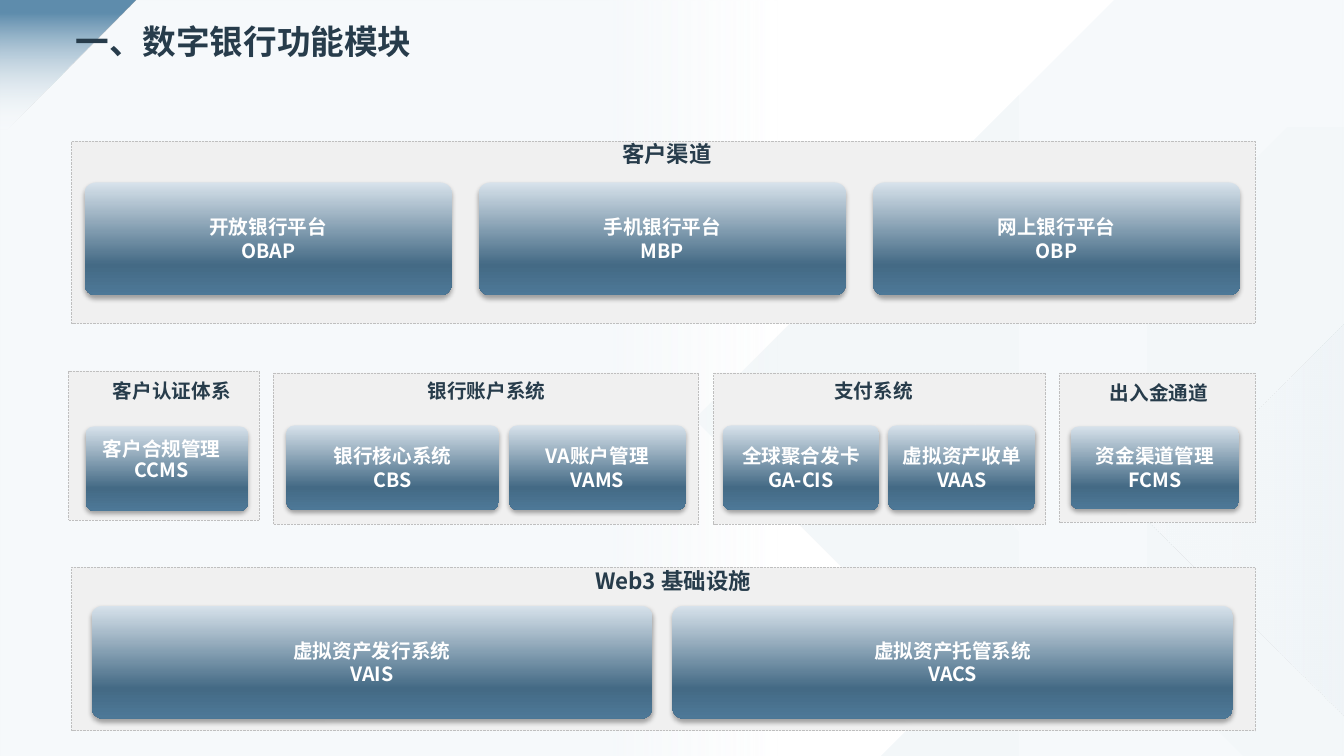
"""Build the slide on the function modules of a digital bank."""
from lxml import etree
from pptx import Presentation
from pptx.dml.color import RGBColor
from pptx.enum.dml import MSO_LINE
from pptx.enum.shapes import MSO_SHAPE
from pptx.enum.text import MSO_ANCHOR, PP_ALIGN
from pptx.oxml import parse_xml
from pptx.oxml.ns import nsdecls, qn
from pptx.util import Inches, Pt

RECTANGLE, ROUNDED = MSO_SHAPE.RECTANGLE, MSO_SHAPE.ROUNDED_RECTANGLE
TRIANGLE, DOTTED = MSO_SHAPE.RIGHT_TRIANGLE, MSO_LINE.ROUND_DOT
LEFT, CENTER = PP_ALIGN.LEFT, PP_ALIGN.CENTER
TOP, MIDDLE = MSO_ANCHOR.TOP, MSO_ANCHOR.MIDDLE

FONT = "Noto Sans CJK SC"
NAVY = RGBColor(0x27, 0x3C, 0x4B)
WHITE = RGBColor(0xFF, 0xFF, 0xFF)
PANEL_GREY = RGBColor(0xF0, 0xF0, 0xF0)
BORDER_GREY = RGBColor(0xBF, 0xBF, 0xBF)
MIST = RGBColor(0xF6, 0xF9, 0xFB)
HAZE = RGBColor(0xF3, 0xF7, 0xF9)
FOG = RGBColor(0xEF, 0xF4, 0xF8)
CORNER_BLUE = RGBColor(0x5F, 0x8D, 0xAD)
CARD_STOPS = [
    (0, RGBColor(0xD7, 0xE2, 0xEB), 100),
    (73, RGBColor(0x44, 0x6A, 0x85), 100),
    (100, RGBColor(0x4D, 0x78, 0x97), 100),
]

WIDTH, HEIGHT = 13.33, 7.5
CORNER = 1.35
TITLE = "一、数字银行功能模块"
TITLE_BOX = (0.65, 0.25, 10.53, 0.51)

FACET_STOPS = [(0, MIST, 100), (100, HAZE, 100)]
FACETS = [
    ([(11.05, 0), (WIDTH, 0), (WIDTH, HEIGHT), (8.74, HEIGHT), (9.48, 6.76), (6.89, 4.16)],
     FACET_STOPS, 180),
    ([(12.77, 1.26), (WIDTH, 1.26), (WIDTH, HEIGHT), (12.33, HEIGHT), (9.43, 4.6)],
     FACET_STOPS, 0),
    ([(WIDTH, 3.21), (WIDTH, 7.11), (11.38, 5.16)],
     [(0, MIST, 100), (57, HAZE, 100), (100, FOG, 70)], 0),
]

LARGE = {"size": 16, "spacing": 1.1, "inset": 0}
SMALL = {"size": 14, "spacing": 0.7, "inset": 0.03}
CCMS = "客户合规管理CCMS"
CCMS_BOX = (0.79, 4.36, 1.63, 0.53)

MODULES = [
    {"panel": (0.71, 1.4, 11.74, 1.81), "heading": "客户渠道",
     "place": (5.3, 1.36, 2.63, 0.29), "look": LARGE,
     "row": (0.84, 1.81, 1.12), "gap": 0.27,
     "cards": [(3.64, ["开放银行平台", "OBAP"]),
               (3.64, ["手机银行平台", "MBP"]),
               (3.64, ["网上银行平台", "OBP"])]},
    {"panel": (0.68, 3.68, 1.89, 1.48), "heading": "客户认证体系",
     "place": (0.93, 3.79, 1.55, 0.28), "look": SMALL,
     "row": (0.85, 4.23, 0.84), "gap": 0, "cards": [(1.61, [])]},
    {"panel": (2.71, 3.7, 4.22, 1.5), "heading": "银行账户系统",
     "place": (3.83, 3.79, 1.99, 0.32), "look": SMALL,
     "row": (2.84, 4.22, 0.84), "gap": 0.1,
     "cards": [(2.11, ["银行核心系统", "CBS"]), (1.75, ["VA账户管理", "VAMS"])]},
    {"panel": (7.08, 3.7, 3.29, 1.5), "heading": "支付系统",
     "place": (7.67, 3.79, 1.99, 0.32), "look": SMALL,
     "row": (7.17, 4.22, 0.84), "gap": 0.09,
     "cards": [(1.55, ["全球聚合发卡", "GA-CIS"]), (1.46, ["虚拟资产收单", "VAAS"])]},
    {"panel": (10.51, 3.7, 1.94, 1.48), "heading": "出入金通道",
     "place": (10.72, 3.81, 1.55, 0.28), "look": SMALL,
     "row": (10.62, 4.23, 0.82), "gap": 0,
     "cards": [(1.67, ["资金渠道管理", "FCMS"])]},
    {"panel": (0.71, 5.63, 11.74, 1.62), "heading": "Web3 基础设施",
     "place": (4.75, 5.6, 3.85, 0.29), "look": LARGE,
     "row": (0.91, 6.01, 1.12), "gap": 0.2,
     "cards": [(5.56, ["虚拟资产发行系统", "VAIS"]),
               (5.56, ["虚拟资产托管系统", "VACS"])]},
]


def set_all(target, values):
    for name, value in values.items():
        setattr(target, name, value)


def fill_gradient(shape, stops, angle):
    shape.fill.background()
    stop_xml = "".join(
        f'<a:gs pos="{place * 1000}"><a:srgbClr val="{color}">'
        f'<a:alpha val="{opacity * 1000}"/></a:srgbClr></a:gs>'
        for place, color, opacity in stops)
    gradient = parse_xml(
        f'<a:gradFill {nsdecls("a")} rotWithShape="1"><a:gsLst>{stop_xml}</a:gsLst>'
        f'<a:lin ang="{angle * 60000}" scaled="0"/></a:gradFill>')
    properties = shape._element.spPr
    properties.replace(properties.find(qn("a:noFill")), gradient)


def add_shape(page, kind, box):
    shape = page.shapes.add_shape(kind, *map(Inches, box))
    shape.shadow.inherit = False
    shape.line.fill.background()
    return shape


def write(shape, lines, size, color, align=CENTER, anchor=TOP, spacing=1.0, inset=0.0):
    frame = shape.text_frame
    set_all(frame, {"word_wrap": True, "vertical_anchor": anchor,
                    "margin_top": Inches(inset), "margin_bottom": Inches(inset)})
    for index, line in enumerate(lines):
        para = frame.add_paragraph() if index else frame.paragraphs[0]
        set_all(para, {"alignment": align, "line_spacing": spacing})
        span = para.add_run()
        span.text = line
        span.font.color.rgb = color
        set_all(span.font, {"size": Pt(size), "bold": True, "name": FONT})
        etree.SubElement(span._r.rPr, qn("a:ea"), typeface=FONT)


def add_text(page, box, text, size, color, **look):
    write(page.shapes.add_textbox(*map(Inches, box)), [text], size, color, **look)


def add_backdrop(page):
    for points, stops, angle in FACETS:
        corners = [(Inches(x), Inches(y)) for x, y in points]
        builder = page.shapes.build_freeform(*corners[0])
        builder.add_line_segments(corners[1:], close=True)
        facet = builder.convert_to_shape()
        facet.shadow.inherit = False
        facet.line.fill.background()
        fill_gradient(facet, stops, angle)
    veil = add_shape(page, RECTANGLE, (0, 0, WIDTH, HEIGHT))
    fill_gradient(veil, [(45, MIST, 100), (58, MIST, 0)], 0)
    corner = add_shape(page, TRIANGLE, (0, 0, CORNER, CORNER))
    corner.rotation = 90
    fill_gradient(corner, [(10, CORNER_BLUE, 100), (95, MIST, 0)], 0)


def add_card(page, box, lines):
    card = add_shape(page, ROUNDED, box)
    card.adjustments[0] = 0.1
    fill_gradient(card, CARD_STOPS, 90)
    effects = card._element.spPr.find(qn("a:effectLst"))
    effects.append(parse_xml(
        f'<a:outerShdw {nsdecls("a")} blurRad="{Pt(3.5)}" dist="{Pt(2.2)}" dir="5400000" '
        'rotWithShape="0"><a:srgbClr val="000000"><a:alpha val="32000"/></a:srgbClr>'
        '</a:outerShdw>'))
    write(card, lines, 14, WHITE, anchor=MIDDLE, inset=0.05)


def add_module(page, module):
    panel = add_shape(page, RECTANGLE, module["panel"])
    panel.fill.solid()
    panel.fill.fore_color.rgb = PANEL_GREY
    panel.line.color.rgb = BORDER_GREY
    set_all(panel.line, {"width": Pt(0.5), "dash_style": DOTTED})
    add_text(page, module["place"], module["heading"], color=NAVY, **module["look"])
    left, top, height = module["row"]
    for width, lines in module["cards"]:
        add_card(page, (left, top, width, height), lines)
        left += width + module["gap"]


def main():
    deck = Presentation()
    set_all(deck, {"slide_width": Inches(WIDTH), "slide_height": Inches(HEIGHT)})
    page = deck.slides.add_slide(deck.slide_layouts[6])
    add_backdrop(page)
    for module in MODULES:
        add_module(page, module)
    add_text(page, CCMS_BOX, CCMS, 14, WHITE, spacing=0.9)
    add_text(page, TITLE_BOX, TITLE, 24, NAVY, align=LEFT, spacing=0.9)
    deck.save("out.pptx")


if __name__ == "__main__":
    main()
